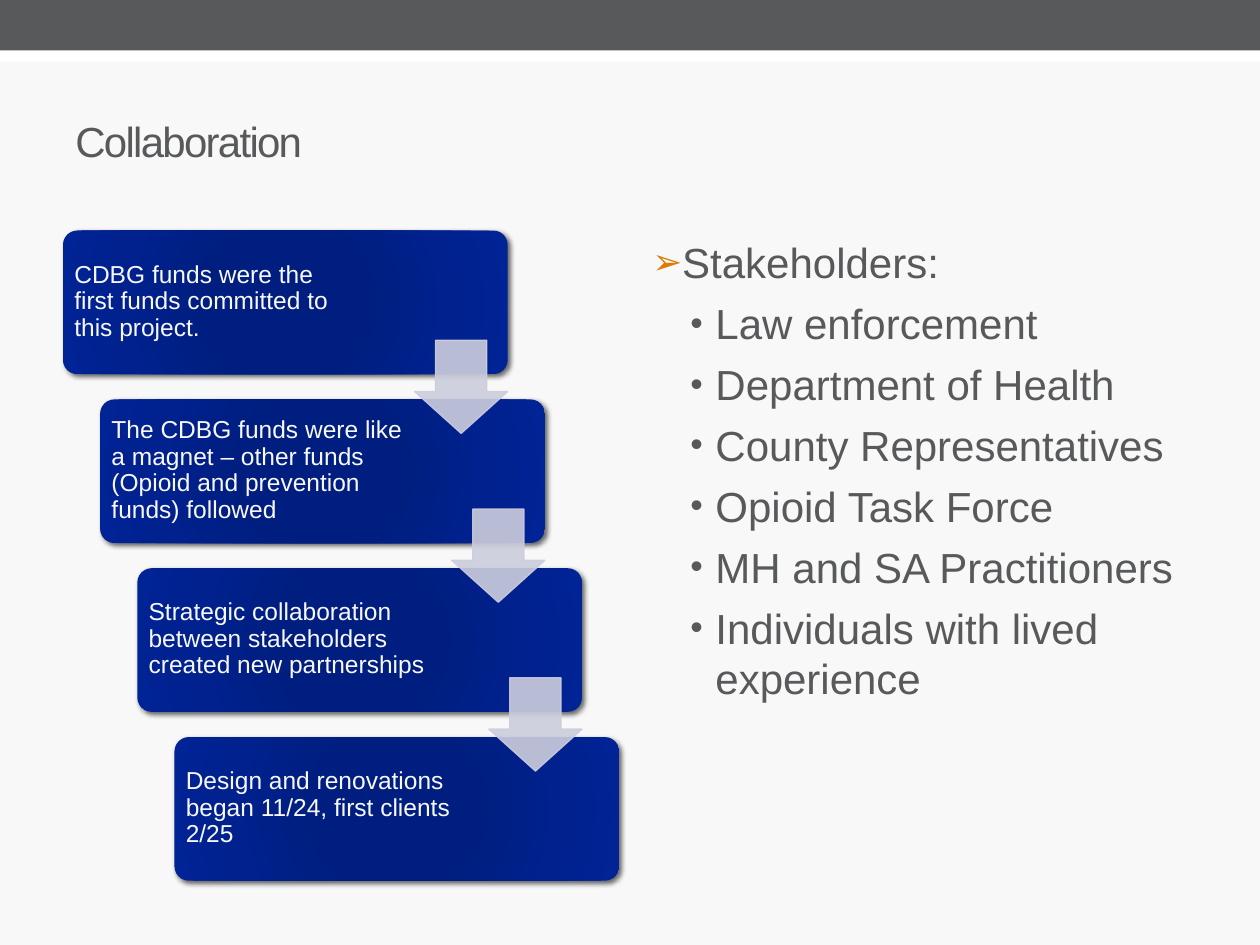
from lxml import etree
from pptx import Presentation
from pptx.dml.color import RGBColor
from pptx.enum import shapes, text
from pptx.oxml import parse_xml
from pptx.oxml.ns import nsdecls, qn
from pptx.util import Inches, Pt

GREY = RGBColor(0x58, 0x59, 0x5B)
ORANGE = RGBColor(0xDF, 0x7A, 0x00)
PALE = RGBColor(0xF8, 0xF8, 0xF8)
WHITE = RGBColor(0xFF, 0xFF, 0xFF)
LAVENDER = RGBColor(0xCC, 0xCD, 0xDD)
NAVY = RGBColor(0x00, 0x1E, 0x80)
MID_BLUE = RGBColor(0x00, 0x21, 0x8E)
BLUE = RGBColor(0x00, 0x23, 0x95)
CARD_STOPS = [(0, NAVY), (34, NAVY), (70, MID_BLUE), (100, BLUE)]

FONT = "Arial"
STEP_LEFT, STEP_TOP = 0.5, 1.83
STEP_DX, STEP_DY = 0.295, 1.34
CARD_WIDTH, CARD_HEIGHT = 3.53, 1.14
ARROW_SIZE = 0.74

# Step wording and the width of its text area
STEPS = [
    ("CDBG funds were the first funds committed to this project.", 2.21),
    ("The CDBG funds were like a magnet – other funds (Opioid and prevention "
     "funds) followed", 2.43),
    ("Strategic collaboration between stakeholders created new partnerships",
     2.43),
    ("Design and renovations began 11/24, first clients 2/25", 2.43),
]
STAKEHOLDERS = [
    "Law enforcement",
    "Department of Health",
    "County Representatives",
    "Opioid Task Force",
    "MH and SA Practitioners",
    "Individuals with lived experience",
]


def add_plain_shape(slide, kind, left, top, width, height):
    shape = slide.shapes.add_shape(
        kind, Inches(left), Inches(top), Inches(width), Inches(height))
    shape.shadow.inherit = False
    shape.line.fill.background()
    return shape


def add_band(slide, top, height, color):
    band = add_plain_shape(
        slide, shapes.MSO_SHAPE.RECTANGLE, 0, top, 10, height)
    band.fill.solid()
    band.fill.fore_color.rgb = color


def add_text_frame(slide, left, top, width, height,
                   anchor=text.MSO_ANCHOR.TOP):
    box = slide.shapes.add_textbox(
        Inches(left), Inches(top), Inches(width), Inches(height))
    frame = box.text_frame
    frame.word_wrap = True
    frame.vertical_anchor = anchor
    return frame


def style_font(paragraph, size, color):
    paragraph.font.name = FONT
    paragraph.font.size = Pt(size)
    paragraph.font.color.rgb = color


def add_title(slide, wording):
    frame = add_text_frame(slide, 0.5, 0.58, 9, 1.08, text.MSO_ANCHOR.MIDDLE)
    paragraph = frame.paragraphs[0]
    run = paragraph.add_run()
    run.text = wording
    run.font._element.set("spc", "-100")
    style_font(paragraph, 24, GREY)


def set_bullet(paragraph, symbol, color, margin):
    properties = paragraph._p.get_or_add_pPr()
    properties.set("marL", str(Inches(margin)))
    properties.set("indent", str(Inches(-0.2)))
    bullet_color = etree.SubElement(properties, qn("a:buClr"))
    etree.SubElement(bullet_color, qn("a:srgbClr"), val=str(color))
    etree.SubElement(properties, qn("a:buSzPct"), val="85000")
    etree.SubElement(properties, qn("a:buFont"), typeface=FONT)
    etree.SubElement(properties, qn("a:buChar"), char=symbol)


def add_stakeholders(slide):
    frame = add_text_frame(slide, 5.08, 1.83, 4.42, 5.16)
    heading = frame.paragraphs[0]
    heading.text = "Stakeholders:"
    set_bullet(heading, "➢", ORANGE, 0.2)
    style_font(heading, 24, GREY)
    for stakeholder in STAKEHOLDERS:
        item = frame.add_paragraph()
        item.text = stakeholder
        item.level = 1
        set_bullet(item, "•", GREY, 0.5)
        item.space_before = Pt(6)
        style_font(item, 24, GREY)


def fill_radial(shape, stops):
    shape.fill.background()
    stop_xml = "".join(
        f'<a:gs pos="{position * 1000}"><a:srgbClr val="{color}"/></a:gs>'
        for position, color in stops)
    gradient = parse_xml(
        f'<a:gradFill {nsdecls("a")} rotWithShape="1">'
        f'<a:gsLst>{stop_xml}</a:gsLst><a:path path="circle">'
        '<a:fillToRect l="100000" t="100000" r="100000" b="100000"/>'
        '</a:path></a:gradFill>')
    properties = shape._element.spPr
    properties.replace(properties.find(qn("a:noFill")), gradient)


def add_drop_shadow(shape):
    effects = shape._element.spPr.find(qn("a:effectLst"))
    effects.append(parse_xml(
        f'<a:outerShdw {nsdecls("a")} blurRad="{Pt(3)}" dist="{Pt(2)}" '
        'dir="2700000" rotWithShape="0"><a:srgbClr val="000000">'
        '<a:alpha val="60000"/></a:srgbClr></a:outerShdw>'))


def add_step(slide, left, top, wording, text_width):
    card = add_plain_shape(slide, shapes.MSO_SHAPE.ROUNDED_RECTANGLE,
                           left, top, CARD_WIDTH, CARD_HEIGHT)
    card.adjustments[0] = 0.1
    fill_radial(card, CARD_STOPS)
    add_drop_shadow(card)

    frame = add_text_frame(slide, left + 0.03, top + 0.03, text_width, 1.07,
                           text.MSO_ANCHOR.MIDDLE)
    frame.margin_left = frame.margin_right = Inches(0.06)
    frame.margin_top = frame.margin_bottom = Inches(0.06)
    paragraph = frame.paragraphs[0]
    paragraph.text = wording
    paragraph.line_spacing = 0.9
    style_font(paragraph, 14, PALE)


def add_step_arrow(slide, left, top):
    arrow = add_plain_shape(slide, shapes.MSO_SHAPE.DOWN_ARROW,
                            left, top, ARROW_SIZE, ARROW_SIZE)
    arrow.adjustments[0] = 0.55
    arrow.adjustments[1] = 0.45
    arrow.line.width = Pt(0.75)
    for paint in (arrow.fill, arrow.line.fill):
        paint.solid()
        paint.fore_color.rgb = LAVENDER
    for color in arrow._element.spPr.iter(qn("a:srgbClr")):
        etree.SubElement(color, qn("a:alpha"), val="90000")


def add_staircase(slide):
    corners = [(STEP_LEFT + i * STEP_DX, STEP_TOP + i * STEP_DY)
               for i in range(len(STEPS))]
    for (left, top), (wording, text_width) in zip(corners, STEPS):
        add_step(slide, left, top, wording, text_width)
    for left, top in corners[:-1]:
        add_step_arrow(slide, left + CARD_WIDTH - ARROW_SIZE, top + 0.87)


def main():
    deck = Presentation()
    deck.slide_width, deck.slide_height = Inches(10), Inches(7.5)
    slide = deck.slides.add_slide(deck.slide_layouts[6])
    slide.background.fill.solid()
    slide.background.fill.fore_color.rgb = PALE
    add_band(slide, 0.24, 0.25, WHITE)
    add_band(slide, 0, 0.4, GREY)
    add_title(slide, "Collaboration")
    add_stakeholders(slide)
    add_staircase(slide)
    deck.save("out.pptx")


if __name__ == "__main__":
    main()
